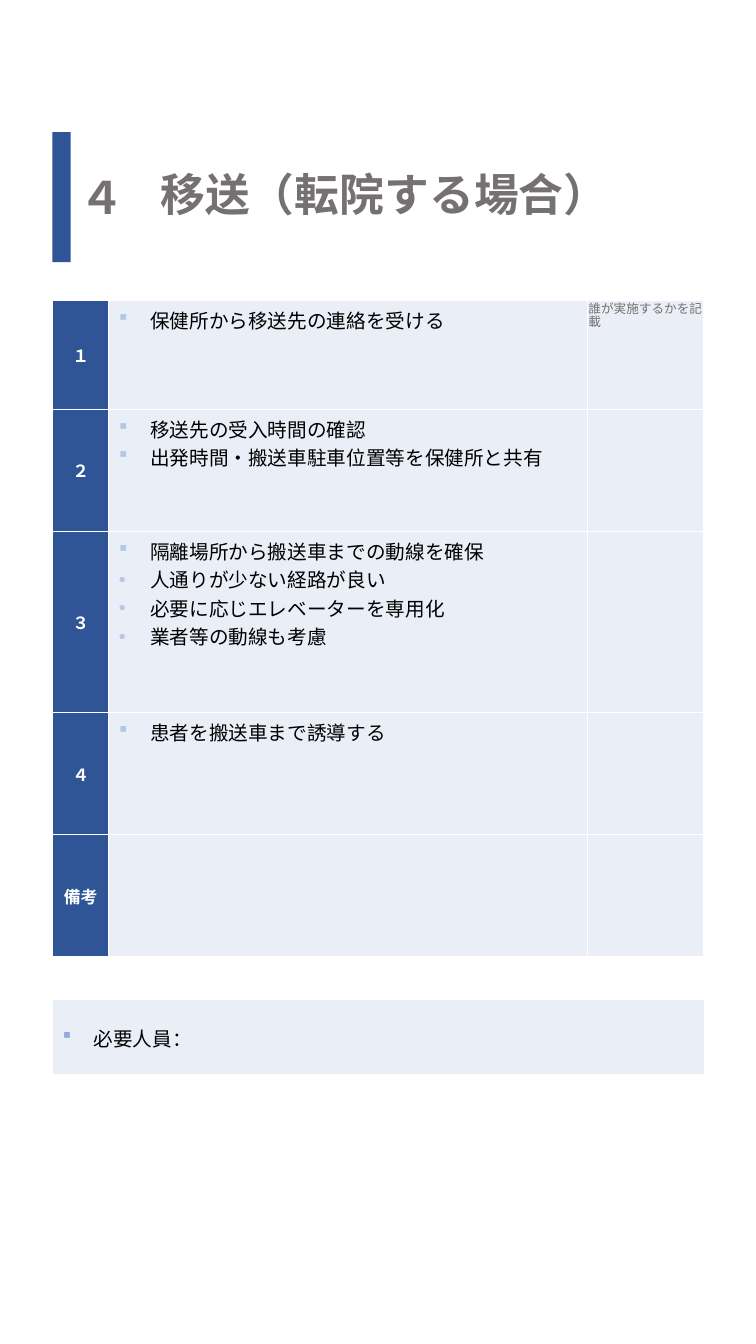
from lxml import etree
from pptx import Presentation
from pptx.dml.color import RGBColor
from pptx.enum.shapes import MSO_SHAPE
from pptx.enum.text import MSO_ANCHOR, MSO_AUTO_SIZE, PP_ALIGN
from pptx.oxml.ns import qn
from pptx.util import Inches, Pt

MIDDLE, TOP = MSO_ANCHOR.MIDDLE, MSO_ANCHOR.TOP
LEFT, CENTER = PP_ALIGN.LEFT, PP_ALIGN.CENTER
RECTANGLE, NO_AUTOFIT = MSO_SHAPE.RECTANGLE, MSO_AUTO_SIZE.NONE

FONT = "Noto Sans CJK JP"
COLORS = {
    "navy": "2F5597",
    "pale": "EAEFF7",
    "white": "FFFFFF",
    "black": "000000",
    "gray": "767171",
    "step_bullet": "B4C7E7",
    "staff_bullet": "8FAADC",
}
SQUARE = ("Wingdings", "§")
DOT = ("Arial", "•")

NUMBER = "４"
TITLE = "移送（転院する場合）"
NOTE = "誰が実施するかを記載"
STAFF = [(SQUARE, "必要人員：")]

# label, row height, bulleted lines
STEPS = [
    ("１", 1.08, [(SQUARE, "保健所から移送先の連絡を受ける")]),
    ("２", 1.21, [(SQUARE, "移送先の受入時間の確認"),
                 (SQUARE, "出発時間・搬送車駐車位置等を保健所と共有")]),
    ("３", 1.8, [(SQUARE, "隔離場所から搬送車までの動線を確保"),
                (DOT, "人通りが少ない経路が良い"),
                (DOT, "必要に応じエレベーターを専用化"),
                (DOT, "業者等の動線も考慮")]),
    ("４", 1.21, [(SQUARE, "患者を搬送車まで誘導する")]),
    ("備考", 1.21, []),
]
MARGIN = 0.52
STEP_COLUMNS = [0.56, 4.75, 1.15]
STAFF_COLUMNS = [6.47]


def rgb(name):
    return RGBColor.from_string(COLORS[name])


def format_text(p, size, color, bold=False, align=LEFT):
    p.alignment = align
    for r in p.runs:
        r.font.size = Pt(size)
        r.font.bold = bold
        r.font.color.rgb = rgb(color)
        r.font.name = FONT
        etree.SubElement(r.font._element, qn("a:ea"), typeface=FONT)


def fill_solid(target, color):
    target.fill.solid()
    target.fill.fore_color.rgb = rgb(color)


def add_bullet(p, bullet, color):
    font, char = bullet
    pPr = p._p.get_or_add_pPr()
    pPr.set("marL", str(Inches(0.31)))
    pPr.set("indent", str(Inches(-0.31)))
    clr = etree.SubElement(pPr, qn("a:buClr"))
    etree.SubElement(clr, qn("a:srgbClr"), val=COLORS[color])
    etree.SubElement(pPr, qn("a:buFont"), typeface=font)
    etree.SubElement(pPr, qn("a:buChar"), char=char)


def write_list(cell, lines, bullet_color):
    tf = cell.text_frame
    tf.text = "\n".join(text for _, text in lines)
    for p, (bullet, _) in zip(tf.paragraphs, lines):
        format_text(p, 14, "black")
        add_bullet(p, bullet, bullet_color)


def set_borders(cell, bottom):
    tcPr = cell._tc.get_or_add_tcPr()
    for i, (side, width) in enumerate(zip("LRTB", (1, 1, 1, bottom))):
        ln = etree.Element(qn(f"a:ln{side}"), w=str(Pt(width)))
        fill = etree.SubElement(ln, qn("a:solidFill"))
        etree.SubElement(fill, qn("a:srgbClr"), val=COLORS["white"])
        tcPr.insert(i, ln)


def add_plain_table(s, top, columns, rows, bottom=1):
    frame = s.shapes.add_table(
        len(rows), len(columns), Inches(MARGIN), Inches(top),
        Inches(sum(columns)), Inches(sum(rows)))
    table = frame.table
    table.first_row = table.horz_banding = False
    for column, width in zip(table.columns, columns):
        column.width = Inches(width)
    for row, height in zip(table.rows, rows):
        row.height = Inches(height)
    for cell in table.iter_cells():
        fill_solid(cell, "pale")
        set_borders(cell, bottom)
    return table


def add_text(s, box, text, size, bold=False):
    tf = s.shapes.add_textbox(*map(Inches, box)).text_frame
    tf.word_wrap = True
    tf.text = text
    format_text(tf.paragraphs[0], size, "gray", bold)
    return tf.paragraphs[0]


def add_heading(s):
    title = s.shapes.title
    title.left, title.top, title.width, title.height = map(
        Inches, (1.49, 1.33, 5.5, 1.24))
    fill_solid(title, "white")
    tf = title.text_frame
    tf.text = TITLE
    tf.auto_size = NO_AUTOFIT
    tf.vertical_anchor = MIDDLE
    p = tf.paragraphs[0]
    p.line_spacing = 0.9
    format_text(p, 32, "gray", True)

    bar = s.shapes.add_shape(
        RECTANGLE, *map(Inches, (MARGIN, 1.31, 0.18, 1.29)))
    bar.shadow.inherit = False
    fill_solid(bar, "navy")
    bar.line.fill.background()
    add_text(s, (0.69, 1.63, 0.66, 0.64), NUMBER, 32, True)


def add_steps(s):
    table = add_plain_table(s, 2.98, STEP_COLUMNS, [h for _, h, _ in STEPS])
    for i, (label, _, lines) in enumerate(STEPS):
        cell = table.cell(i, 0)
        fill_solid(cell, "navy")
        cell.vertical_anchor = MIDDLE
        cell.text_frame.text = label
        format_text(cell.text_frame.paragraphs[0], 12, "white", True, CENTER)
        body = table.cell(i, 1)
        body.vertical_anchor = TOP
        if lines:
            write_list(body, lines, "step_bullet")


def add_staff(s):
    cell = add_plain_table(s, 9.91, STAFF_COLUMNS, [0.76], 3).cell(0, 0)
    cell.vertical_anchor = MIDDLE
    write_list(cell, STAFF, "staff_bullet")


def main():
    prs = Presentation()
    prs.slide_width, prs.slide_height = Inches(7.5), Inches(13.33)
    s = prs.slides.add_slide(prs.slide_layouts[5])
    add_heading(s)
    add_steps(s)
    add_staff(s)
    note = add_text(s, (5.74, 2.96, 1.33, 0.25), NOTE, 9)
    note.line_spacing = 0.85
    prs.save("out.pptx")


if __name__ == "__main__":
    main()
